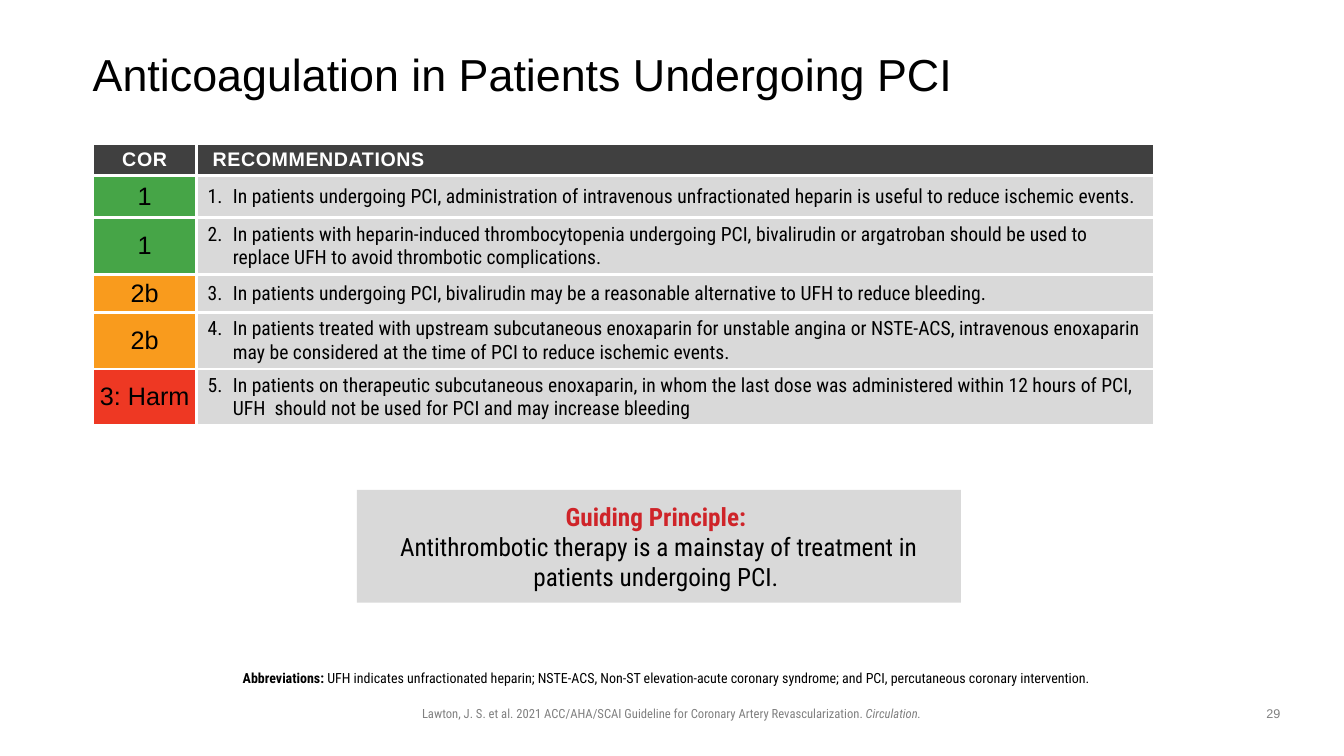
from pptx import Presentation
from pptx.dml.color import RGBColor
from pptx.enum.shapes import MSO_SHAPE
from pptx.enum.text import MSO_ANCHOR, PP_ALIGN
from pptx.oxml.ns import qn
from pptx.util import Inches, Pt
from lxml.etree import SubElement

ROBOTO = "Roboto Condensed"
BLACK, WHITE, GREY, PANEL = "000000", "FFFFFF", "808080", "D9D9D9"
GREEN, ORANGE, RED = "46A547", "F99B1D", "EE3823"


def color(value):
    return RGBColor.from_string(value)


def add_run(paragraph, text, size, name, value, bold=False, italic=False):
    run = paragraph.add_run()
    run.text = text
    font = run.font
    font.size, font.name, font.bold, font.italic = Pt(size), name, bold, italic
    font.color.rgb = color(value)
    return run


presentation = Presentation()
presentation.slide_width, presentation.slide_height = Inches(13.33), Inches(7.5)
slide = presentation.slides.add_slide(presentation.slide_layouts[6])

# Recommendation table
recommendations = [
    ("1", GREEN, 0.42, "In patients undergoing PCI, administration of intravenous unfractionated heparin is useful to reduce ischemic events."),
    ("1", GREEN, 0.56, "In patients with heparin-induced thrombocytopenia undergoing PCI, bivalirudin or argatroban should be used to replace UFH to avoid thrombotic complications."),
    ("2b", ORANGE, 0.38, "In patients undergoing PCI, bivalirudin may be a reasonable alternative to UFH to reduce bleeding."),
    ("2b", ORANGE, 0.56, "In patients treated with upstream subcutaneous enoxaparin for unstable angina or NSTE-ACS, intravenous enoxaparin may be considered at the time of PCI to reduce ischemic events."),
    ("3: Harm", RED, 0.56, "In patients on therapeutic subcutaneous enoxaparin, in whom the last dose was administered within 12 hours of PCI, UFH  should not be used for PCI and may increase bleeding"),
]
table = slide.shapes.add_table(
    len(recommendations) + 1, 2, Inches(0.92), Inches(1.42), Inches(10.53), Inches(2.8)
).table
table.columns[0].width, table.columns[1].width = Inches(1.03), Inches(9.5)

# Header row
table.rows[0].height = Inches(0.32)
for column, (heading, spacing) in enumerate([("COR", "50"), ("RECOMMENDATIONS", "40")]):
    cell = table.cell(0, column)
    cell.fill.solid()
    cell.fill.fore_color.rgb = color("404040")
    paragraph = cell.text_frame.paragraphs[0]
    run = add_run(paragraph, heading, 14, "Arial", WHITE, bold=True)
    run.font._element.set("spc", spacing)
table.cell(0, 0).text_frame.paragraphs[0].alignment = PP_ALIGN.CENTER
table.cell(0, 1).margin_left = Inches(0.16)

# Class and numbered recommendation rows
for number, (grade, grade_fill, height, text) in enumerate(recommendations, 1):
    table.rows[number].height = Inches(height)
    grade_cell, text_cell = table.cell(number, 0), table.cell(number, 1)
    for cell, fill in ((grade_cell, grade_fill), (text_cell, PANEL)):
        cell.fill.solid()
        cell.fill.fore_color.rgb = color(fill)
        cell.margin_left = cell.margin_right = Inches(0.05)
    paragraph = grade_cell.text_frame.paragraphs[0]
    paragraph.alignment = PP_ALIGN.CENTER
    add_run(paragraph, grade, 18, "Arial", BLACK)
    paragraph = text_cell.text_frame.paragraphs[0]
    properties = paragraph._p.get_or_add_pPr()
    properties.set("marL", str(Inches(0.31)))
    properties.set("indent", str(Inches(-0.25)))
    SubElement(properties, qn("a:buFont"), typeface="+mj-lt")
    SubElement(properties, qn("a:buAutoNum"), type="arabicPeriod", startAt=str(number))
    add_run(paragraph, text, 14, ROBOTO, BLACK)

# White cell borders
for cell in table.iter_cells():
    cell.vertical_anchor = MSO_ANCHOR.MIDDLE
    properties = cell._tc.get_or_add_tcPr()
    for position, side in enumerate(("a:lnL", "a:lnR", "a:lnT", "a:lnB")):
        line = SubElement(properties, qn(side), w=str(Pt(2.25)))
        SubElement(SubElement(line, qn("a:solidFill")), qn("a:srgbClr"), val=WHITE)
        properties.insert(position, line)

# Guiding principle panel
panel = slide.shapes.add_shape(
    MSO_SHAPE.RECTANGLE, Inches(3.54), Inches(4.86), Inches(5.99), Inches(1.12)
)
panel.shadow.inherit = False
panel.fill.solid()
panel.fill.fore_color.rgb = color(PANEL)
panel.line.fill.background()

# Text boxes: position, margins (left, top, right, bottom), runs
default_margins = (0.1, 0.05, 0.1, 0.05)
text_boxes = [
    ((0.92, 0.4, 11.5, 0.72), (0, 0, 0, 0), [
        ("Anticoagulation in Patients Undergoing PCI", 32, "Arial", BLACK)]),
    ((3.62, 4.92, 5.83, 1.01), default_margins, [
        ("Guiding Principle: \v", 18, ROBOTO, "CF2429", True),
        ("Antithrombotic therapy is a mainstay of treatment in patients undergoing PCI. ", 18, ROBOTO, BLACK)]),
    ((2.2, 6.61, 8.94, 0.2), (0, 0.05, 0.1, 0.05), [
        ("Abbreviations: ", 10, ROBOTO, BLACK, True),
        ("UFH indicates unfractionated heparin; NSTE-ACS, Non-ST elevation-acute coronary syndrome; and PCI, percutaneous coronary intervention. ", 10, ROBOTO, BLACK)]),
    ((3.17, 6.95, 6.98, 0.25), default_margins, [
        ("Lawton, J. S. et al. 2021 ACC/AHA/SCAI Guideline for Coronary Artery Revascularization. ", 9, ROBOTO, GREY),
        ("Circulation.", 9, ROBOTO, GREY, False, True)]),
    ((12.42, 6.95, 0.42, 0.26), default_margins, [("29", 9, "Arial", GREY)]),
]
frames = []
for place, margins, runs in text_boxes:
    frame = slide.shapes.add_textbox(*map(Inches, place)).text_frame
    frame.word_wrap = True
    (frame.margin_left, frame.margin_top,
     frame.margin_right, frame.margin_bottom) = map(Inches, margins)
    paragraph = frame.paragraphs[0]
    paragraph.alignment = PP_ALIGN.CENTER
    for text, *style in runs:
        add_run(paragraph, text.rstrip("\v"), *style)
        if text.endswith("\v"):
            paragraph.add_line_break()
    frames.append(frame)

# Title and abbreviations settings
title, abbreviations = frames[0], frames[2]
title.vertical_anchor = MSO_ANCHOR.MIDDLE
title.paragraphs[0].alignment = PP_ALIGN.LEFT
for frame in (title, abbreviations):
    frame.paragraphs[0].line_spacing = 0.9

presentation.save("out.pptx")
